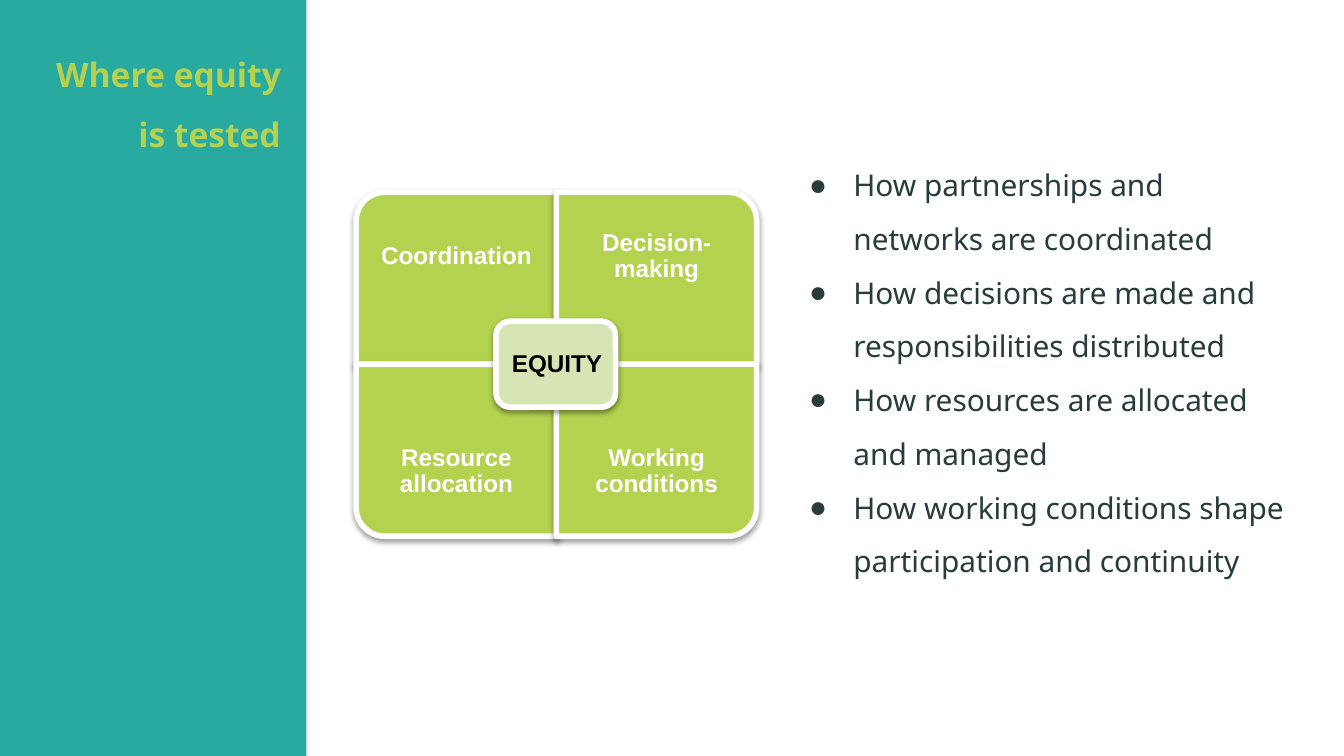
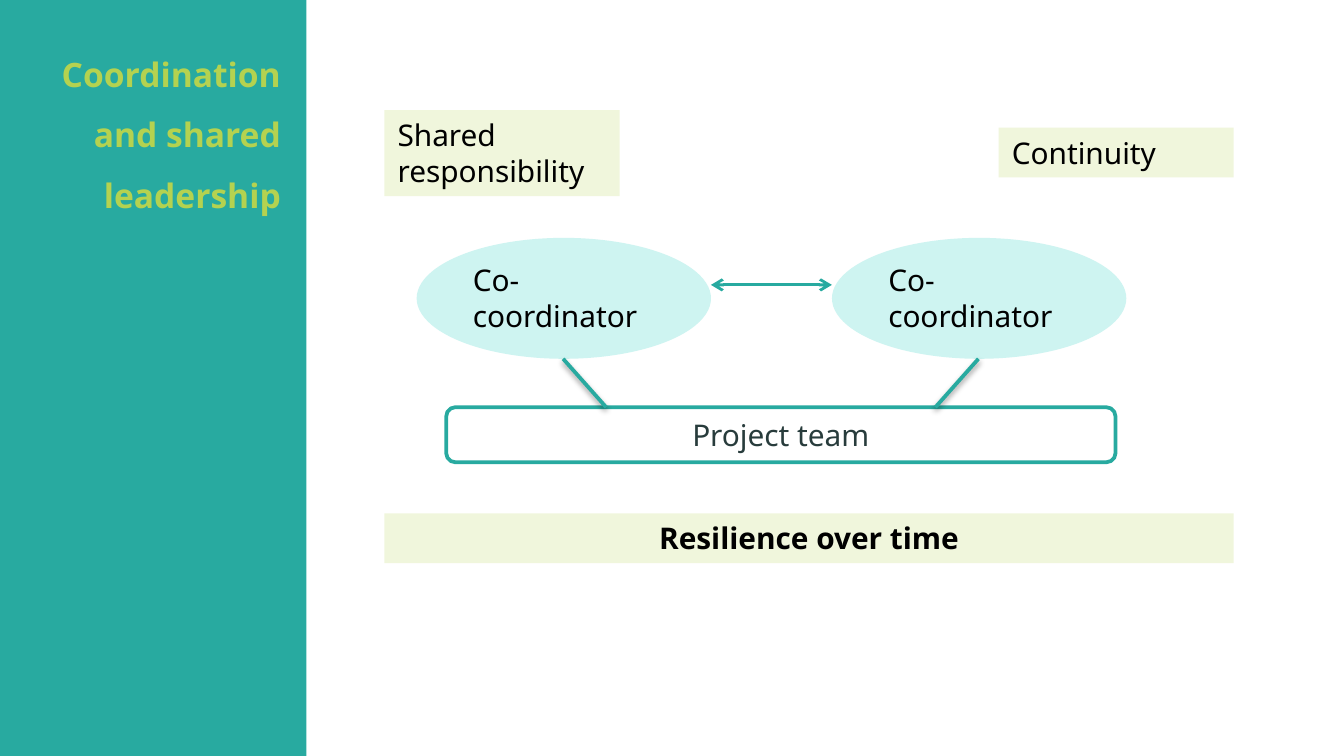
from dataclasses import dataclass
from typing import Any, Optional

from lxml.etree import SubElement
from pptx import Presentation
from pptx.dml.color import RGBColor
from pptx.enum.shapes import MSO_CONNECTOR, MSO_SHAPE
from pptx.enum.text import MSO_ANCHOR, MSO_AUTO_SIZE, PP_ALIGN
from pptx.oxml.ns import qn
from pptx.util import Inches, Pt

# Shared colours and fonts
TEAL = RGBColor(0x28, 0xAA, 0xA0)
LIME = RGBColor(0xB4, 0xD2, 0x50)
DARK = RGBColor(0x28, 0x3C, 0x3C)
WHITE = RGBColor(0xFF, 0xFF, 0xFF)
BLACK = RGBColor(0x00, 0x00, 0x00)
PALE_GREEN = RGBColor(0xD6, 0xE5, 0xB3)
PALE_LIME = RGBColor(0xF0, 0xF6, 0xDC)
PALE_TEAL = RGBColor(0xCE, 0xF4, 0xF1)
MAIN_FONT, DIAGRAM_FONT = "Noto Sans", "Arial"

# Widescreen page, 16 by 9
SLIDE_WIDTH, BAND_WIDTH = 10, 2.28
SLIDE_HEIGHT = SLIDE_WIDTH * 9 / 16


@dataclass(frozen=True)
class Frame:
    left: float
    top: float
    width: float
    height: float

    def lengths(self) -> list:
        return [Inches(v) for v in (self.left, self.top, self.width, self.height)]


@dataclass(frozen=True)
class TextStyle:
    size: float = 16
    color: RGBColor = BLACK
    bold: bool = False
    name: str = MAIN_FONT
    align: PP_ALIGN = PP_ALIGN.LEFT
    spacing: float = 1.0


@dataclass(frozen=True)
class Quadrant:
    label: str
    column: int
    row: int
    rotation: int


@dataclass(frozen=True)
class Box:
    text: str
    frame: Frame
    kind: MSO_SHAPE
    fill: RGBColor
    style: TextStyle = TextStyle()
    line: Optional[RGBColor] = None


@dataclass(frozen=True)
class Link:
    start: tuple
    end: tuple
    width: float = 2
    arrows: bool = False
    shadowed: bool = True


TITLE_STYLE = TextStyle(18, LIME, True, align=PP_ALIGN.RIGHT, spacing=1.5)
LIST_STYLE = TextStyle(color=DARK, spacing=1.5)
QUADRANT_STYLE = TextStyle(13, WHITE, True, DIAGRAM_FONT, PP_ALIGN.CENTER, 0.9)
CORE_STYLE = TextStyle(13, BLACK, True, DIAGRAM_FONT, PP_ALIGN.CENTER, 0.9)
TEAM_STYLE = TextStyle(color=DARK, align=PP_ALIGN.CENTER)
BANNER_STYLE = TextStyle(bold=True, align=PP_ALIGN.CENTER)

# Slide 1 content
EQUITY_POINTS = [
    "How partnerships and networks are coordinated",
    "How decisions are made and responsibilities distributed",
    "How resources are allocated and managed",
    "How working conditions shape participation and continuity",
]
MATRIX_LEFT, MATRIX_TOP = 2.65, 1.43
CELL_WIDTH, CELL_HEIGHT, LABEL_HEIGHT = 1.49, 1.28, 0.96
QUADRANTS = [
    Quadrant("Coordination", 0, 0, 270),
    Quadrant("Decision-making", 1, 0, 0),
    Quadrant("Resource allocation", 0, 1, 180),
    Quadrant("Working conditions", 1, 1, 90),
]

# Slide 2 content
BOXES = [
    Box("Shared responsibility", Frame(2.86, 0.82, 1.75, 0.64), MSO_SHAPE.RECTANGLE, PALE_LIME),
    Box("Continuity", Frame(7.43, 0.95, 1.75, 0.37), MSO_SHAPE.RECTANGLE, PALE_LIME),
    Box("Co-coordinator", Frame(3.1, 1.77, 2.19, 0.9), MSO_SHAPE.OVAL, PALE_TEAL),
    Box("Co-coordinator", Frame(6.19, 1.77, 2.19, 0.9), MSO_SHAPE.OVAL, PALE_TEAL),
    Box("Project team", Frame(3.32, 3.03, 4.98, 0.41), MSO_SHAPE.ROUNDED_RECTANGLE,
        WHITE, TEAM_STYLE, TEAL),
    Box("Resilience over time", Frame(2.86, 3.82, 6.32, 0.37), MSO_SHAPE.RECTANGLE,
        PALE_LIME, BANNER_STYLE),
]
LINKS = [
    Link((5.29, 2.12), (6.19, 2.12), 1.5, arrows=True, shadowed=False),
    Link((4.19, 2.67), (4.51, 3.03)),
    Link((7.28, 2.67), (6.96, 3.03)),
]


def set_format(target: Any, values: dict) -> None:
    for name, value in values.items():
        setattr(target, name, value)


def set_effects(shape: Any, shadowed: bool) -> None:
    """Replace the theme shadow by a soft one, or by none."""
    effects = SubElement(shape.element.spPr, qn("a:effectLst"))
    if shadowed:
        shadow = SubElement(effects, qn("a:outerShdw"), blurRad=str(Pt(3.1)),
                            dist=str(Pt(1.6)), dir="5400000", rotWithShape="0")
        color = SubElement(shadow, qn("a:srgbClr"), val=str(BLACK))
        SubElement(color, qn("a:alpha"), val="38000")


def add_bullet(paragraph: Any, color: RGBColor) -> None:
    properties = paragraph._p.get_or_add_pPr()
    indents = {"marL": Inches(0.5), "indent": Inches(-0.33)}
    for name, value in indents.items():
        properties.set(name, str(value))
    bullet_color = SubElement(properties, qn("a:buClr"))
    SubElement(bullet_color, qn("a:srgbClr"), val=str(color))
    SubElement(properties, qn("a:buFont"), typeface=DIAGRAM_FONT)
    SubElement(properties, qn("a:buChar"), char="●")


def write_text(shape: Any, lines: list, style: TextStyle, inset: tuple = (0.1, 0.1),
               anchor: MSO_ANCHOR = MSO_ANCHOR.TOP, grow: bool = False,
               bulleted: bool = False) -> None:
    frame = shape.text_frame
    side, edge = (Inches(value) for value in inset)
    set_format(frame, {
        "word_wrap": True,
        "auto_size": MSO_AUTO_SIZE.SHAPE_TO_FIT_TEXT if grow else MSO_AUTO_SIZE.NONE,
        "vertical_anchor": anchor,
        "margin_left": side, "margin_right": side,
        "margin_top": edge, "margin_bottom": edge,
    })
    for index, line in enumerate(lines):
        paragraph = frame.add_paragraph() if index else frame.paragraphs[0]
        if bulleted:
            add_bullet(paragraph, style.color)
        set_format(paragraph, {"alignment": style.align, "line_spacing": style.spacing,
                               "space_before": Pt(0), "space_after": Pt(0)})
        run = paragraph.add_run()
        run.text = line
        set_format(run.font, {"name": style.name, "size": Pt(style.size),
                              "bold": style.bold})
        run.font.color.rgb = style.color


def place(shape: Any, frame: Frame) -> None:
    set_format(shape, dict(zip(("left", "top", "width", "height"), frame.lengths())))


def add_panel(shapes: Any, kind: MSO_SHAPE, frame: Frame, fill: RGBColor,
              line: Optional[RGBColor] = None, line_width: float = 2,
              shadowed: bool = False) -> Any:
    shape = shapes.add_shape(kind, *frame.lengths())
    shape.fill.solid()
    shape.fill.fore_color.rgb = fill
    if line is None:
        shape.line.fill.background()
    else:
        shape.line.color.rgb = line
        shape.line.width = Pt(line_width)
    set_effects(shape, shadowed)
    return shape


def add_label(shapes: Any, text: str, frame: Frame, style: TextStyle,
              inset: float = 0.1) -> None:
    label = shapes.add_textbox(*frame.lengths())
    write_text(label, [text], style, (inset, inset), MSO_ANCHOR.MIDDLE)


def add_quadrant(shapes: Any, quadrant: Quadrant) -> None:
    left = MATRIX_LEFT + quadrant.column * CELL_WIDTH
    top = MATRIX_TOP + quadrant.row * CELL_HEIGHT
    # A quarter turn swaps the sides around the same centre
    turned = quadrant.rotation % 180 != 0
    width, height = (CELL_HEIGHT, CELL_WIDTH) if turned else (CELL_WIDTH, CELL_HEIGHT)
    frame = Frame(left + (CELL_WIDTH - width) / 2, top + (CELL_HEIGHT - height) / 2,
                  width, height)
    panel = add_panel(shapes, MSO_SHAPE.ROUND_1_RECTANGLE, frame, LIME, WHITE, 3, True)
    panel.rotation = quadrant.rotation
    label_top = top + quadrant.row * (CELL_HEIGHT - LABEL_HEIGHT)
    add_label(shapes, quadrant.label, Frame(left, label_top, CELL_WIDTH, LABEL_HEIGHT),
              QUADRANT_STYLE)


def add_box(shapes: Any, box: Box) -> None:
    shape = add_panel(shapes, box.kind, box.frame, box.fill, box.line)
    write_text(shape, [box.text], box.style, (0.1, 0.05), grow=True)


def add_link(shapes: Any, link: Link) -> None:
    points = [Inches(value) for value in link.start + link.end]
    connector = shapes.add_connector(MSO_CONNECTOR.STRAIGHT, *points)
    connector.line.color.rgb = TEAL
    connector.line.width = Pt(link.width)
    if link.arrows:
        for end in ("a:headEnd", "a:tailEnd"):
            SubElement(connector.line._get_or_add_ln(), qn(end), type="arrow")
    set_effects(connector, link.shadowed)


def add_titled_slide(presentation: Any, layout: int, title: str, height: float) -> Any:
    slide = presentation.slides.add_slide(presentation.slide_layouts[layout])
    place(slide.shapes.title, Frame(0.18, 0.15, 2.01, height))
    write_text(slide.shapes.title, [title], TITLE_STYLE)
    return slide


def add_master_band(presentation: Any, slide: Any) -> None:
    """Draw the side band and move it behind everything on the master."""
    band = add_panel(slide.shapes, MSO_SHAPE.RECTANGLE,
                     Frame(0, 0, BAND_WIDTH, SLIDE_HEIGHT), TEAL)
    presentation.slide_master.shapes.element.insert(2, band.element)


def build_equity_slide(presentation: Any) -> Any:
    slide = add_titled_slide(presentation, 1, "Where equity is tested", 2.21)
    body = slide.placeholders[1]
    place(body, Frame(5.75, 1.01, 3.94, 3.61))
    write_text(body, EQUITY_POINTS, LIST_STYLE, bulleted=True)

    # Four quadrants around the core
    matrix = slide.shapes.add_group_shape().shapes
    for quadrant in QUADRANTS:
        add_quadrant(matrix, quadrant)
    add_panel(matrix, MSO_SHAPE.ROUNDED_RECTANGLE, Frame(3.69, 2.39, 0.89, 0.64),
              PALE_GREEN, WHITE, 3, True)
    add_label(matrix, "EQUITY", Frame(3.73, 2.42, 0.83, 0.58), CORE_STYLE, 0.05)
    return slide


def build_leadership_slide(presentation: Any) -> None:
    slide = add_titled_slide(presentation, 5, "Coordination and shared leadership", 2.48)
    for box in BOXES:
        add_box(slide.shapes, box)
    for link in LINKS:
        add_link(slide.shapes, link)


def main() -> None:
    presentation = Presentation()
    set_format(presentation, {"slide_width": Inches(SLIDE_WIDTH),
                              "slide_height": Inches(SLIDE_HEIGHT)})
    first_slide = build_equity_slide(presentation)
    add_master_band(presentation, first_slide)
    build_leadership_slide(presentation)
    presentation.save("out.pptx")


if __name__ == "__main__":
    main()
